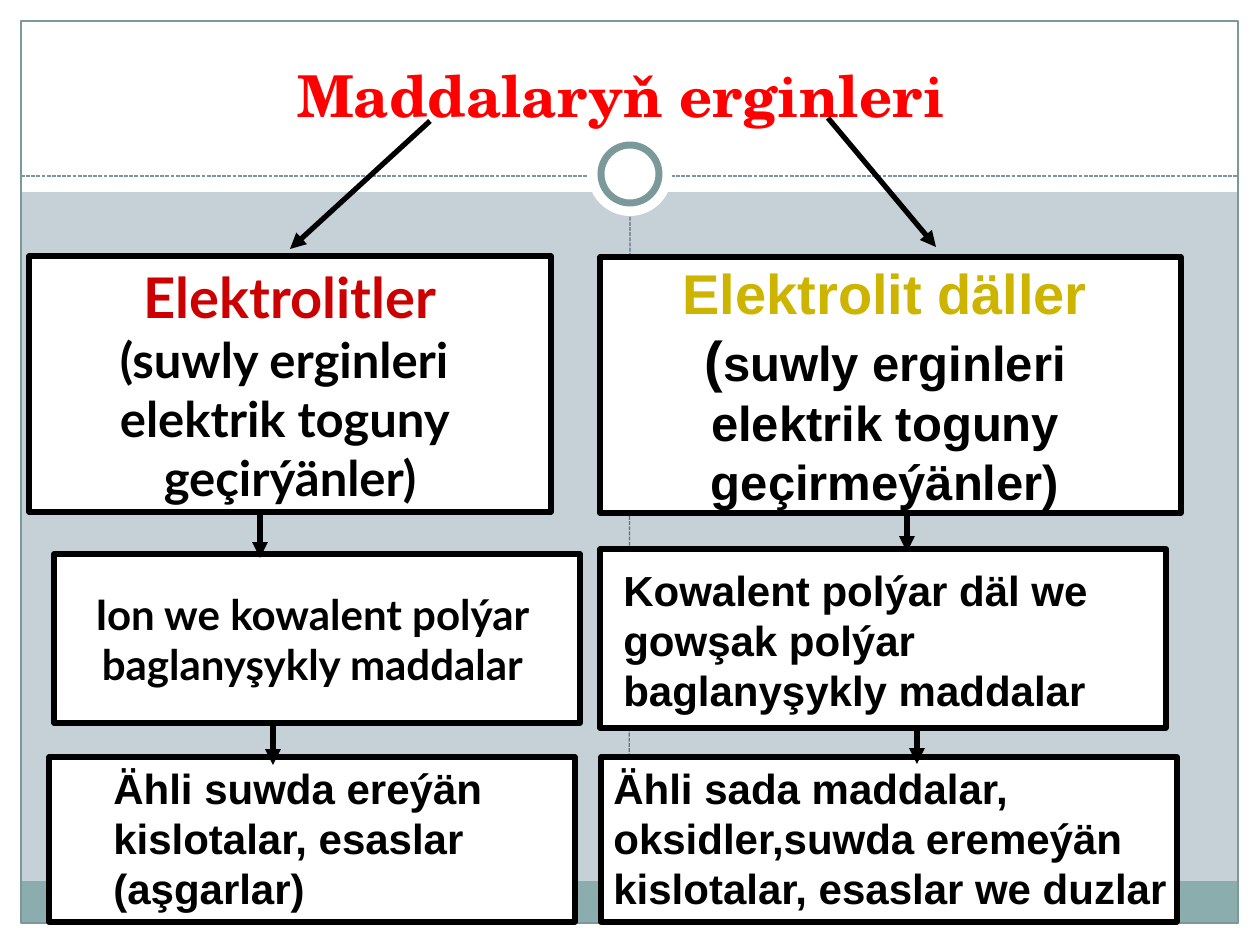
from lxml.etree import SubElement
from pptx import Presentation
from pptx.dml.color import RGBColor
from pptx.enum.dml import MSO_LINE
from pptx.enum.shapes import MSO_CONNECTOR, MSO_SHAPE
from pptx.enum.text import MSO_ANCHOR, PP_ALIGN
from pptx.oxml.ns import qn
from pptx.util import Emu, Pt

SCALE = 914400 / 126
COLORS = {
    "background": "C5D1D7", "white": "FFFFFF", "black": "000000",
    "band": "8CADAE", "frame": "7C999A", "divider": "646B86",
    "title": "FF0000", "electrolyte": "CC0000", "nonelectrolyte": "CCB400",
}


def px(value):
    return Emu(round(value * SCALE))


def color(name):
    return RGBColor.from_string(COLORS[name])


class SlideBuilder:
    def __init__(self, slide):
        self.slide = slide
        slide.background.fill.solid()
        slide.background.fill.fore_color.rgb = color("background")

    def shape(self, bounds, fill=None, line=None, width=3, kind=MSO_SHAPE.RECTANGLE):
        shape = self.slide.shapes.add_shape(kind, *map(px, bounds))
        shape.shadow.inherit = False
        if fill:
            shape.fill.solid()
            shape.fill.fore_color.rgb = color(fill)
        else:
            shape.fill.background()
        if line:
            shape.line.color.rgb = color(line)
            shape.line.width = Pt(width)
        else:
            shape.line.fill.background()
        return shape

    def box(self, bounds):
        return self.shape(bounds, "white", "black")

    def line(self, points, line, width):
        connector = self.slide.shapes.add_connector(MSO_CONNECTOR.STRAIGHT, *map(px, points))
        connector.line.color.rgb = color(line)
        connector.line.width = Pt(width)
        SubElement(connector._element.spPr, qn("a:effectLst"))
        return connector

    def dashed_line(self, points, line):
        self.line(points, line, 0.75).line.dash_style = MSO_LINE.SQUARE_DOT

    def arrow(self, points):
        connector = self.line(points, "black", 3)
        outline = connector._element.spPr.find(qn("a:ln"))
        SubElement(outline, qn("a:tailEnd"), type="triangle")

    def fill_text(self, shape, paragraphs, font, align, anchor, wrap):
        text_frame = shape.text_frame
        text_frame.word_wrap = wrap
        text_frame.vertical_anchor = anchor
        for index, runs in enumerate(paragraphs):
            paragraph = text_frame.add_paragraph() if index else text_frame.paragraphs[0]
            paragraph.alignment = align
            for text, size, name in runs:
                run = paragraph.add_run()
                run.text = text
                run.font.name = font
                run.font.size = Pt(size)
                run.font.bold = True
                run.font.color.rgb = color(name)

    def centered_box(self, bounds, paragraphs):
        self.fill_text(self.box(bounds), paragraphs, "Lato", PP_ALIGN.CENTER, MSO_ANCHOR.MIDDLE, False)

    def text(self, bounds, runs, font="Arial", align=PP_ALIGN.LEFT, anchor=MSO_ANCHOR.TOP):
        text_box = self.slide.shapes.add_textbox(*map(px, bounds))
        self.fill_text(text_box, [runs], font, align, anchor, True)


def main():
    presentation = Presentation()
    presentation.slide_width = px(1260)
    presentation.slide_height = px(945)
    builder = SlideBuilder(presentation.slides.add_slide(presentation.slide_layouts[6]))

    for border in [(0, 924, 1260, 21), (0, 0, 1260, 192), (0, 0, 21, 945), (1239, 0, 21, 945)]:
        builder.shape(border, "white")
    builder.shape((21, 881, 1217, 43), "band")
    builder.shape((21, 21, 1217, 902), None, "frame", 0.75)
    builder.dashed_line((21, 176, 1239, 176), "frame")
    builder.shape((588, 132, 84, 84), "white", kind=MSO_SHAPE.OVAL)
    builder.shape((601, 145, 58, 58), "white", "frame", 4, MSO_SHAPE.OVAL)
    builder.dashed_line((629, 881, 630, 217), "divider")

    builder.text((54, 0, 1134, 135), [("Maddalaryň erginleri", 33, "title")],
                 "TeX Gyre Schola", PP_ALIGN.CENTER, MSO_ANCHOR.BOTTOM)

    builder.centered_box((29, 256, 522, 256), [
        [("Elektrolitler", 32, "electrolyte")],
        [("(suwly erginleri ", 28, "black")],
        [("elektrik toguny ", 28, "black")],
        [("geçirýänler)", 28, "black")],
    ])
    builder.centered_box((54, 554, 526, 169), [
        [("Ion we kowalent polýar ", 24, "black")],
        [("baglanyşykly maddalar ", 24, "black")],
    ])

    builder.box((600, 257, 581, 256))
    builder.text((617, 252, 536, 267), [
        ("Elektrolit däller ", 32, "nonelectrolyte"),
        ("(", 32, "black"),
        ("suwly erginleri elektrik toguny geçirmeýänler)", 28, "black"),
    ], align=PP_ALIGN.CENTER)

    captions = [
        ((600, 549, 566, 179), (611, 558, 566, 242),
         "Kowalent polýar däl we gowşak polýar baglanyşykly maddalar"),
        ((49, 757, 526, 165), (101, 756, 466, 165),
         "Ähli suwda ereýän kislotalar, esaslar (aşgarlar)"),
        ((601, 757, 576, 165), (601, 756, 600, 165),
         "Ähli sada maddalar, oksidler,suwda eremeýän kislotalar, esaslar we duzlar"),
    ]
    for box_bounds, text_bounds, caption in captions:
        builder.box(box_bounds)
        builder.text(text_bounds, [(caption, 24, "black")])

    for points in [
        (430, 121, 290, 249), (828, 118, 936, 247),
        (260, 513, 260, 558), (273, 723, 273, 765),
        (907, 512, 907, 552), (917, 731, 917, 764),
    ]:
        builder.arrow(points)

    presentation.save("out.pptx")


if __name__ == "__main__":
    main()
